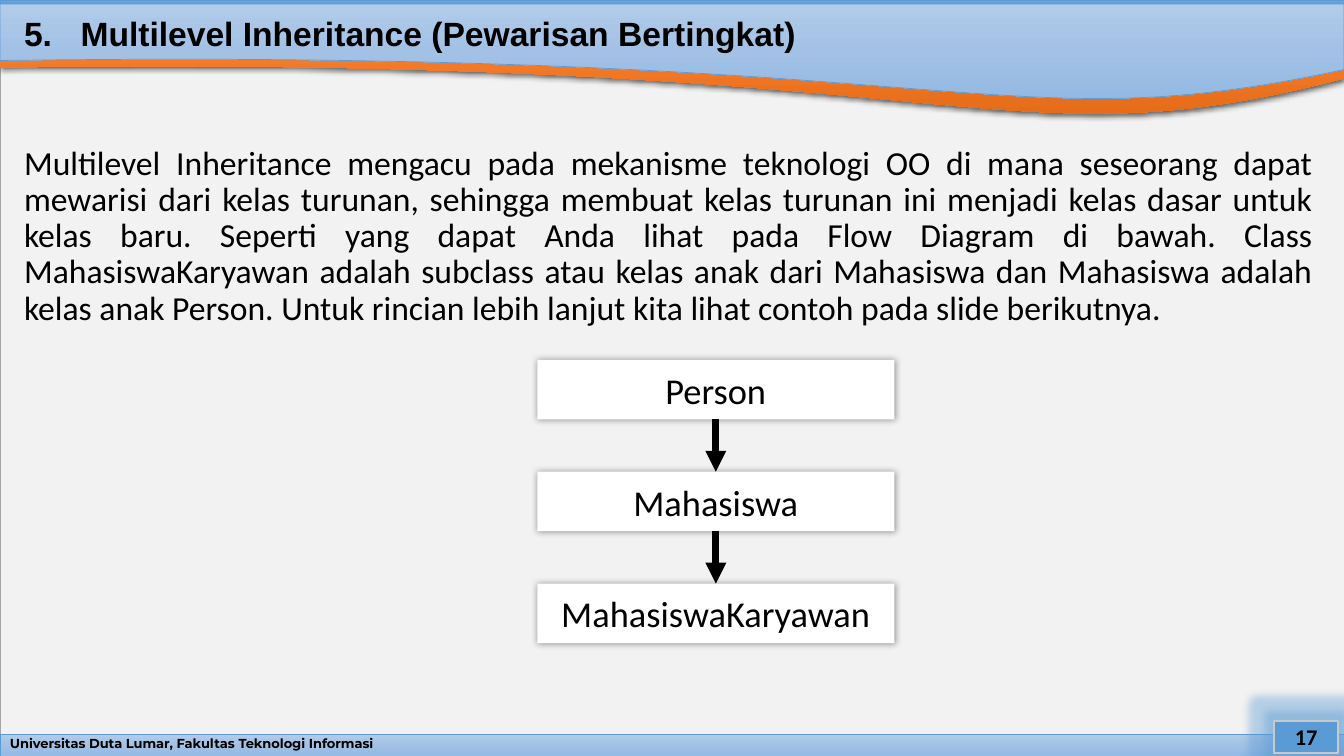
from copy import deepcopy

from lxml import etree
from pptx import Presentation
from pptx.dml.color import RGBColor
from pptx.enum.shapes import MSO_CONNECTOR, MSO_SHAPE
from pptx.enum.text import MSO_ANCHOR, PP_ALIGN
from pptx.oxml.ns import qn
from pptx.util import Inches, Pt

RECT = MSO_SHAPE.RECTANGLE
STRAIGHT = MSO_CONNECTOR.STRAIGHT
TOP, MIDDLE = MSO_ANCHOR.TOP, MSO_ANCHOR.MIDDLE
LEFT, CENTER, JUSTIFY = PP_ALIGN.LEFT, PP_ALIGN.CENTER, PP_ALIGN.JUSTIFY

SLIDE_W, SLIDE_H = 13.33, 7.5
CURVE_STEPS = 60
BLACK, WHITE, BLUE = "000000", "FFFFFF", "5B9BD5"
PALE_BLUES = ("B1CBE9", "A3C1E5", "93B9E4")
STRONG_BLUES = ("71A6DB", "559BDB", "448ACA")
ORANGES = ("F18C57", "F67B28", "E56C19")

BODY = (
    "Multilevel Inheritance mengacu pada mekanisme teknologi OO di mana seseorang "
    "dapat mewarisi dari kelas turunan, sehingga membuat kelas turunan ini menjadi "
    "kelas dasar untuk kelas baru. Seperti yang dapat Anda lihat pada Flow Diagram "
    "di bawah. Class MahasiswaKaryawan adalah subclass atau kelas anak dari Mahasiswa "
    "dan Mahasiswa adalah kelas anak Person. Untuk rincian lebih lanjut kita lihat "
    "contoh pada slide berikutnya."
)
CLASSES = ("Person", "Mahasiswa", "MahasiswaKaryawan")


def rgb(color):
    return RGBColor.from_string(color)


def bezier(start, c1, c2, end):
    points = []
    for i in range(CURVE_STEPS + 1):
        t = i / CURVE_STEPS
        u = 1 - t
        weights = (u**3, 3 * u * u * t, 3 * u * t * t, t**3)
        points.append(tuple(
            sum(w * v for w, v in zip(weights, axis))
            for axis in zip(start, c1, c2, end)
        ))
    return points


class SlideBuilder:
    def __init__(self, slide, font="Calibri", color=BLACK):
        self.shapes = slide.shapes
        self.font = font
        self.color = color

    def paint(self, sp, fill, line=None, line_width=0.5):
        sp.shadow.inherit = False
        if isinstance(fill, str):
            sp.fill.solid()
            sp.fill.fore_color.rgb = rgb(fill)
        else:
            sp.fill.gradient()
            sp.fill.gradient_angle = 270
            stops = sp.element.spPr.find(".//" + qn("a:gsLst"))
            stops.insert(1, deepcopy(stops[0]))
            for stop, color, position in zip(sp.fill.gradient_stops, fill, (0, 0.5, 1)):
                stop.color.rgb = rgb(color)
                stop.position = position
        if line:
            sp.line.color.rgb = rgb(line)
            sp.line.width = Pt(line_width)
        else:
            sp.line.fill.background()

    def effect(self, sp, kind, color, alpha, **attrs):
        effects = sp.element.spPr.find(qn("a:effectLst"))
        node = etree.SubElement(effects, qn("a:" + kind))
        for name, value in attrs.items():
            node.set(name, str(value))
        clr = etree.SubElement(node, qn("a:srgbClr"), val=color)
        etree.SubElement(clr, qn("a:alpha"), val=str(alpha * 1000))

    def shadow(self, sp, alpha, blur, dist=0, angle=0):
        self.effect(sp, "outerShdw", BLACK, alpha, blurRad=Pt(blur), dist=Pt(dist),
                    dir=angle * 60000, algn="ctr", rotWithShape=0)

    def rect(self, x, y, w, h, fill, line=None, line_width=0.5):
        sp = self.shapes.add_shape(RECT, Inches(x), Inches(y), Inches(w), Inches(h))
        self.paint(sp, fill, line, line_width)
        return sp

    def wave(self, top, left_y, c1_y, c2_y, right_y, fill, line=None):
        curve = bezier((0, left_y), (9.76, c1_y), (9.86, c2_y), (SLIDE_W, right_y))
        points = [(Inches(x), Inches(y)) for x, y in [(0, top)] + curve]
        builder = self.shapes.build_freeform(Inches(SLIDE_W), Inches(top))
        builder.add_line_segments(points, close=True)
        sp = builder.convert_to_shape()
        self.paint(sp, fill, line)
        return sp

    def label(self, sp, text, size, align=LEFT, anchor=MIDDLE, bold=False,
              font=None, spacing=1.0, inset=0.05):
        tf = sp.text_frame
        tf.word_wrap = True
        tf.vertical_anchor = anchor
        tf.margin_top = tf.margin_bottom = Inches(inset)
        p = tf.paragraphs[0]
        p.text = text
        p.alignment = align
        p.line_spacing = spacing
        p.font.size = Pt(size)
        p.font.name = font or self.font
        p.font.bold = bold
        p.font.color.rgb = rgb(self.color)
        return p

    def text(self, x, y, w, h, text, size, **style):
        sp = self.shapes.add_textbox(Inches(x), Inches(y), Inches(w), Inches(h))
        return self.label(sp, text, size, **style)

    def tab_stop(self, sp_p, position):
        p_pr = sp_p._p.pPr
        tabs = etree.Element(qn("a:tabLst"))
        etree.SubElement(tabs, qn("a:tab"), pos=str(Inches(position)), algn="l")
        p_pr.find(qn("a:defRPr")).addprevious(tabs)

    def arrow(self, x, y1, y2):
        line = self.shapes.add_connector(
            STRAIGHT, Inches(x), Inches(y1), Inches(x), Inches(y2))
        line.line.color.rgb = rgb(BLACK)
        line.line.width = Pt(5)
        sp_pr = line.element.spPr
        etree.SubElement(sp_pr.find(qn("a:ln")), qn("a:tailEnd"), type="triangle")
        etree.SubElement(sp_pr, qn("a:effectLst"))


def main():
    prs = Presentation()
    prs.slide_width, prs.slide_height = Inches(SLIDE_W), Inches(SLIDE_H)
    s = SlideBuilder(prs.slides.add_slide(prs.slide_layouts[6]))

    s.rect(0, 0.04, SLIDE_W, 7.46, "F2F2F2", "A5A5A5")
    orange_wave = s.wave(0.01, 0.67, 0.53, 1.68, 0.78, ORANGES)
    s.shadow(orange_wave, 63, 4.5, 1.5, 90)
    s.rect(0, 7.29, SLIDE_W, 0.21, PALE_BLUES, BLUE)
    s.rect(0, 0, SLIDE_W, 0.11, STRONG_BLUES, BLUE)
    s.wave(0.04, 0.6, 0.47, 1.44, 0.69, PALE_BLUES, BLUE)

    s.text(0, 7.29, SLIDE_W, 0.21, "Universitas Duta Lumar, Fakultas Teknologi Informasi",
           9.3, bold=True, font="Montserrat", spacing=0.7, inset=0)
    number = s.rect(12.64, 7.15, 0.63, 0.32, BLUE, "C9C9C9", 1.5)
    s.effect(number, "glow", BLUE, 40, rad=Pt(12))
    s.label(number, "17", 16, align=CENTER, bold=True)

    title = s.text(0.14, 0.12, 12.98, 0.46,
                   "5.\tMultilevel Inheritance (Pewarisan Bertingkat)",
                   24, bold=True, font="Arial", spacing=0.9)
    s.tab_stop(title, 0.56)
    body = s.text(0.14, 1.4, 12.98, 5.4, BODY, 24,
                  align=JUSTIFY, anchor=TOP, spacing=0.9)
    body.space_before = Pt(10)

    box_x, box_y, box_w, box_h, pitch = 5.33, 3.57, 3.54, 0.59, 1.11
    for i, name in enumerate(CLASSES):
        y = box_y + i * pitch
        box = s.rect(box_x, y, box_w, box_h, WHITE)
        s.shadow(box, 40, 5)
        s.label(box, name, 26, align=CENTER)
        if i:
            s.arrow(box_x + box_w / 2, y - pitch + box_h, y)

    prs.save("out.pptx")


if __name__ == "__main__":
    main()
